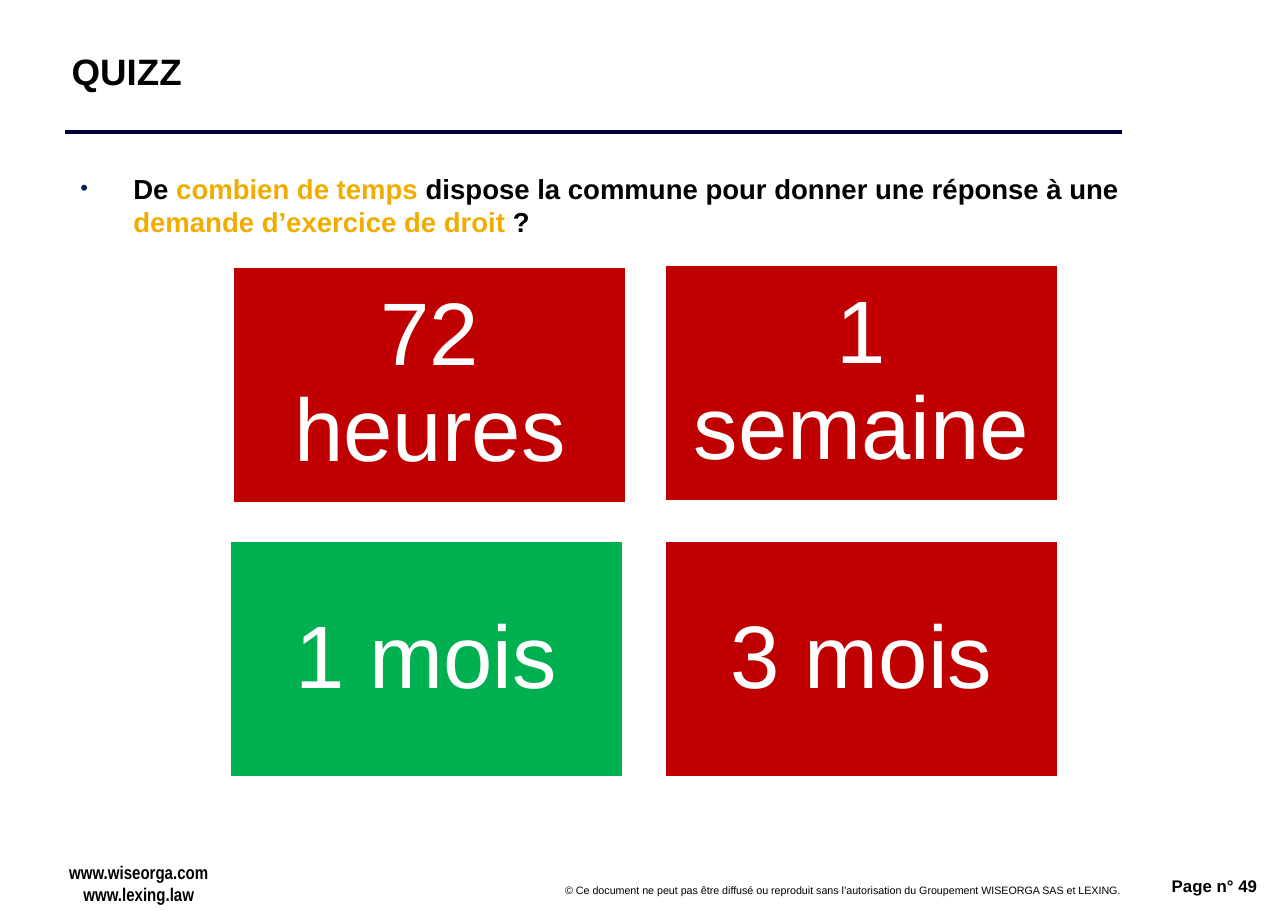
from dataclasses import dataclass

from lxml.etree import SubElement
from pptx import Presentation
from pptx.dml.color import RGBColor
from pptx.enum.shapes import MSO_CONNECTOR, MSO_SHAPE
from pptx.enum.text import MSO_ANCHOR, MSO_AUTO_SIZE, PP_ALIGN
from pptx.oxml.ns import qn
from pptx.util import Inches, Pt


@dataclass(frozen=True)
class Theme:
    ink: str = "000000"
    paper: str = "FFFFFF"
    rule: str = "00003A"
    bullet: str = "002060"
    accent: str = "F0AD00"
    wrong: str = "C00000"
    right: str = "00B050"
    font: str = "Arial"
    narrow: str = "Arial Narrow"
    title: int = 24
    body: int = 18
    answer: int = 58
    site: int = 12
    page: int = 11
    legal: int = 7


theme = Theme()


def color(code):
    return RGBColor.from_string(code)


def place(shape, box):
    shape.left, shape.top, shape.width, shape.height = map(Inches, box)


def setup(frame, side=0.1, edge=0.05, anchor=MSO_ANCHOR.TOP, wrap=True):
    frame.auto_size = MSO_AUTO_SIZE.NONE
    frame.word_wrap = wrap
    frame.vertical_anchor = anchor
    frame.margin_left = frame.margin_right = Inches(side)
    frame.margin_top = frame.margin_bottom = Inches(edge)


def write(para, text, size, tint=theme.ink, bold=True, face=theme.font):
    run = para.add_run()
    run.text = text
    font = run.font
    font.name, font.size, font.bold = face, Pt(size), bold
    font.color.rgb = color(tint)


def indent(para, left, first=0):
    props = para._p.get_or_add_pPr()
    props.set("marL", str(Inches(left)))
    props.set("indent", str(Inches(first)))
    return props


def header(slide, box):
    left, top, width, height = box
    title = slide.shapes.title
    place(title, box)
    title.fill.solid()
    title.fill.fore_color.rgb = color(theme.paper)
    setup(title.text_frame, 0.06, 0.06, MSO_ANCHOR.MIDDLE)
    para = title.text_frame.paragraphs[0]
    para.alignment = PP_ALIGN.LEFT
    write(para, "QUIZZ", theme.title)

    y = Inches(top + height + 0.09)
    rule = slide.shapes.add_connector(
        MSO_CONNECTOR.STRAIGHT, Inches(left), y, Inches(left + width), y)
    rule.line.color.rgb = color(theme.rule)
    rule.line.width = Pt(3)
    SubElement(rule._element.spPr, qn("a:effectLst"))


def question(slide, box):
    body = slide.placeholders[1]
    place(body, box)
    setup(body.text_frame)
    para = body.text_frame.paragraphs[0]
    props = indent(para, 0.52, -0.48)
    tint = SubElement(props, qn("a:buClr"))
    SubElement(tint, qn("a:srgbClr"), val=theme.bullet)
    SubElement(props, qn("a:buSzPct"), val="80000")
    SubElement(props, qn("a:buFont"), typeface=theme.font)
    SubElement(props, qn("a:buChar"), char="•")
    para.alignment = PP_ALIGN.LEFT
    para.space_before = Pt(0)
    parts = [
        ("De ", theme.ink),
        ("combien de temps ", theme.accent),
        ("dispose la commune pour donner une réponse à une ", theme.ink),
        ("demande d’exercice de droit ", theme.accent),
        ("?", theme.ink),
    ]
    for text, tint in parts:
        write(para, text, theme.body, tint)


def tile(slide, box, text, fill):
    card = slide.shapes.add_shape(MSO_SHAPE.RECTANGLE, *map(Inches, box))
    card.shadow.inherit = False
    card.fill.solid()
    card.fill.fore_color.rgb = color(fill)
    card.line.color.rgb = color(theme.paper)
    card.line.width = Pt(2)
    setup(card.text_frame, 0.24, 0.24, MSO_ANCHOR.MIDDLE)
    para = card.text_frame.paragraphs[0]
    para.alignment = PP_ALIGN.CENTER
    para.line_spacing = 0.9
    write(para, text, theme.answer, theme.paper, False)


def answers(slide, box):
    left, top, width, height = box
    wide, high = 3.58, 2.15
    cells = [
        ("72 heures", theme.wrong, 0.03, 0.02),
        ("1 semaine", theme.wrong, 0, 0),
        ("1 mois", theme.right, 0, 0),
        ("3 mois", theme.wrong, 0, 0),
    ]
    for index, (text, fill, right, down) in enumerate(cells):
        row, col = divmod(index, 2)
        x = left + col * (width - wide) + right
        y = top + row * (height - high) + down
        tile(slide, (x, y, wide, high), text, fill)


def label(slide, box, lines, size, align, face=theme.font, bold=True,
          inset=(0.1, 0.05), wrap=True, lead=0):
    frame = slide.shapes.add_textbox(*map(Inches, box)).text_frame
    setup(frame, *inset, wrap=wrap)
    for index, text in enumerate(lines):
        para = frame.add_paragraph() if index else frame.paragraphs[0]
        para.alignment = align
        indent(para, lead)
        write(para, text, size, bold=bold, face=face)


def footer(slide, box):
    left, top, width, height = box
    inset = (0.11, 0.06)
    label(slide, (left, top, 1.55, height),
          ["www.wiseorga.com", "www.lexing.law"], theme.site,
          PP_ALIGN.CENTER, theme.narrow, inset=inset, wrap=False, lead=0.05)
    label(slide, (left + 3.36, top + 0.2, 6.46, 0.23),
          ["© Ce document ne peut pas être diffusé ou reproduit sans "
           "l’autorisation du Groupement WISEORGA SAS et LEXING."],
          theme.legal, PP_ALIGN.RIGHT, bold=False, inset=inset)
    label(slide, (left + width - 1.21, top + 0.14, 1.21, 0.34),
          ["Page n° 49"], theme.page, PP_ALIGN.RIGHT)


def main():
    deck = Presentation()
    deck.slide_width, deck.slide_height = Inches(11.69), Inches(8.27)
    slide = deck.slides.add_slide(deck.slide_layouts[1])
    header(slide, (0.59, 0.17, 9.59, 0.94))
    question(slide, (0.59, 1.51, 10.09, 0.74))
    answers(slide, (2.08, 2.4, 7.53, 4.66))
    footer(slide, (0.46, 7.76, 11.05, 0.51))
    deck.save("out.pptx")


if __name__ == "__main__":
    main()
